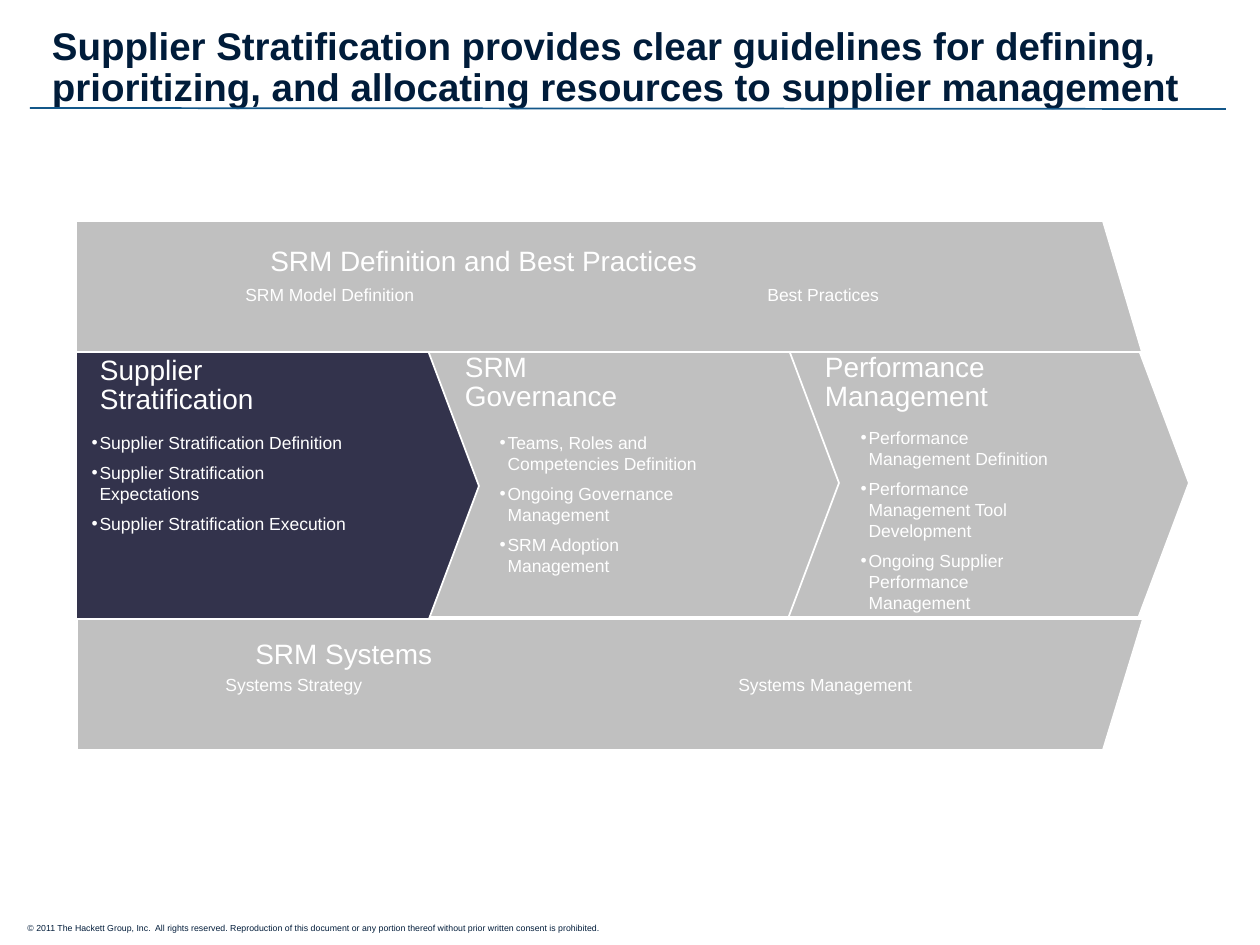
from lxml.etree import SubElement
from pptx import Presentation
from pptx.dml.color import RGBColor
from pptx.enum.shapes import MSO_CONNECTOR, MSO_SHAPE
from pptx.enum.text import MSO_ANCHOR, MSO_AUTO_SIZE, PP_ALIGN
from pptx.oxml.ns import qn
from pptx.util import Emu, Pt

PX = 914400 / 126
INK = RGBColor(0x00, 0x1C, 0x3A)
RULE = RGBColor(0x13, 0x57, 0x89)
GREY = RGBColor(0xC0, 0xC0, 0xC0)
NAVY = RGBColor(0x33, 0x33, 0x4C)
WHITE = RGBColor(0xFF, 0xFF, 0xFF)


def px(*lengths):
    return [Emu(round(n * PX)) for n in lengths]


def write(tf, lines, size, color=WHITE, bold=False, spacing=1.0, gap=0, indent=0, bullet=None):
    tf.word_wrap = True
    tf.auto_size = MSO_AUTO_SIZE.NONE
    for i, line in enumerate(lines):
        p = tf.paragraphs[0] if i == 0 else tf.add_paragraph()
        formats = {"alignment": PP_ALIGN.LEFT, "line_spacing": spacing,
                   "space_before": Pt(gap if i else 0)}
        for name, value in formats.items():
            setattr(p, name, value)
        pPr = p._p.get_or_add_pPr()
        pPr.set("marL", str(px(indent)[0]))
        pPr.set("indent", str(px(-indent)[0] if bullet else 0))
        if bullet:
            SubElement(pPr, qn("a:buChar"), char=bullet)
        r = p.add_run()
        r.text = line
        for name, value in {"name": "Arial", "size": Pt(size), "bold": bold}.items():
            setattr(r.font, name, value)
        r.font.color.rgb = color


prs = Presentation()
prs.slide_width, prs.slide_height = px(1260, 945)
s = prs.slides.add_slide(prs.slide_layouts[4])

rule = s.shapes.add_connector(MSO_CONNECTOR.STRAIGHT, *px(30, 108, 1226, 109))
rule.line.color.rgb = RULE
rule.line.width = Pt(1)
SubElement(rule._element.spPr, qn("a:effectLst"))

title = s.shapes.title
title.left, title.top, title.width, title.height = px(52, -5, 1134, 147)
tf = title.text_frame
for side in ("left", "top", "right", "bottom"):
    setattr(tf, f"margin_{side}", 0)
tf.vertical_anchor = MSO_ANCHOR.MIDDLE
write(tf, ["Supplier Stratification provides clear guidelines for defining, "
           "prioritizing, and allocating resources to supplier management"],
      22, INK, bold=True, spacing=0.9)

arrows = [
    (786, 349, 403, GREY, 39, ["Performance", "Management"]),
    (426, 349, 413, GREY, 39, ["SRM", "Governance"]),
    (76, 352, 403, NAVY, 24, ["Supplier", "Stratification"]),
]
bands = [
    [(76, 352), (76, 221), (1103, 221), (1142, 352)],
    [(77, 619), (77, 750), (1103, 750), (1143, 619)],
]
blocks = []
for left, top, width, color, indent, heading in arrows:
    sp = s.shapes.add_shape(MSO_SHAPE.PENTAGON, *px(left, top, width, 268))
    sp.adjustments[0] = 0.188
    tf = sp.text_frame
    tf.margin_left, tf.margin_top, tf.margin_right, tf.margin_bottom = px(0, 6, 25, 6)
    tf.vertical_anchor = MSO_ANCHOR.TOP
    write(tf, heading, 16, spacing=0.85, indent=indent)
    blocks.append((sp, color))
for start, *corners in bands:
    outline = s.shapes.build_freeform(*start, scale=PX)
    outline.add_line_segments(corners, close=True)
    blocks.append((outline.convert_to_shape(), GREY))
for sp, color in blocks:
    sp.shadow.inherit = False
    sp.fill.solid()
    sp.fill.fore_color.rgb = color
    sp.line.color.rgb = WHITE
    sp.line.width = Pt(1)

labels = [
    (258, 237, 696, 47, 16, WHITE, "SRM Definition and Best Practices"),
    (233, 278, 229, 34, 10, WHITE, "SRM Model Definition"),
    (755, 278, 222, 34, 10, WHITE, "Best Practices"),
    (243, 630, 740, 47, 16, WHITE, "SRM Systems"),
    (213, 668, 270, 34, 10, WHITE, "Systems Strategy"),
    (726, 668, 304, 34, 10, WHITE, "Systems Management"),
    (15, 917, 774, 23, 5, INK,
     "© 2011 The Hackett Group, Inc.  All rights reserved. Reproduction of this document "
     "or any portion thereof without prior written consent is prohibited."),
]
for left, top, width, height, size, color, text in labels:
    box = s.shapes.add_textbox(*px(left, top, width, height))
    write(box.text_frame, [text], size, color)

lists = [
    (79, 426, 285, 117, ["Supplier Stratification Definition",
                         "Supplier Stratification Expectations",
                         "Supplier Stratification Execution"]),
    (487, 426, 242, 223, ["Teams, Roles and Competencies Definition",
                          "Ongoing Governance Management",
                          "SRM Adoption Management"]),
    (848, 421, 239, 160, ["Performance Management Definition",
                          "Performance Management Tool Development",
                          "Ongoing Supplier Performance Management"]),
]
*bodies, spare = [sp for sp in s.placeholders if sp.placeholder_format.idx in (1, 2, 3, 4)]
spare._element.getparent().remove(spare._element)
for body, (left, top, width, height, items) in zip(bodies, lists):
    body.left, body.top, body.width, body.height = px(left, top, width, height)
    body.text_frame.vertical_anchor = MSO_ANCHOR.TOP
    write(body.text_frame, items, 10, gap=5, indent=8, bullet="•")
    s.shapes._spTree.append(body._element)

prs.save("out.pptx")
